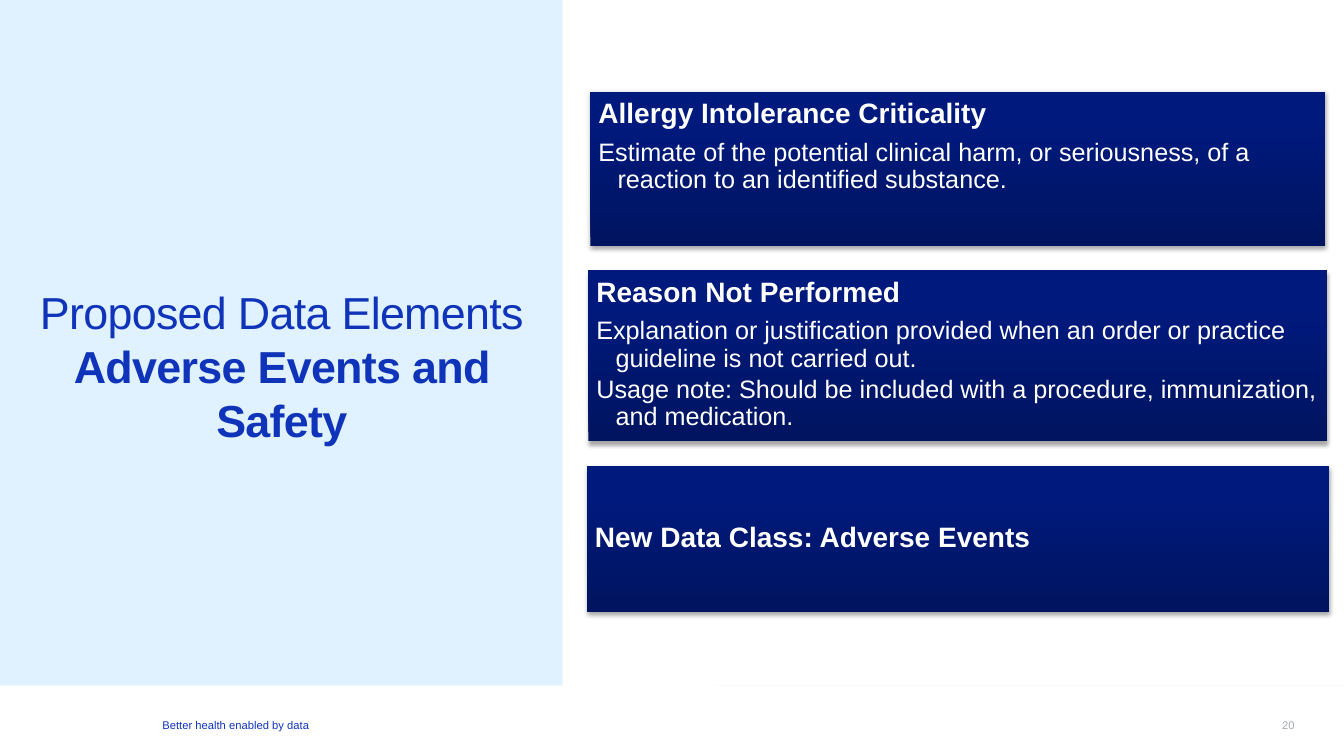
from copy import deepcopy

from pptx import Presentation
from pptx.dml.color import RGBColor
from pptx.enum.shapes import MSO_SHAPE
from pptx.enum.text import MSO_ANCHOR, MSO_AUTO_SIZE, PP_ALIGN
from pptx.oxml import parse_xml
from pptx.oxml.ns import nsdecls, qn
from pptx.util import Inches, Pt

RECT = MSO_SHAPE.RECTANGLE
TOP, MIDDLE, BOTTOM = MSO_ANCHOR.TOP, MSO_ANCHOR.MIDDLE, MSO_ANCHOR.BOTTOM
LEFT, CENTER, RIGHT = PP_ALIGN.LEFT, PP_ALIGN.CENTER, PP_ALIGN.RIGHT
NO_FIT = MSO_AUTO_SIZE.NONE

PALE = RGBColor(0xE0, 0xF2, 0xFF)
BLUE = RGBColor(0x0F, 0x34, 0xBA)
GREY = RGBColor(0xA1, 0xAA, 0xB1)
WHITE = RGBColor(0xFF, 0xFF, 0xFF)
CARD_STOPS = [
    (0, RGBColor(0x00, 0x14, 0x60)),
    (0.8, RGBColor(0x00, 0x19, 0x7D)),
    (1, RGBColor(0x00, 0x1A, 0x7E)),
]

# Content
TITLE = [("Proposed Data Elements", False), ("Adverse Events and Safety", True)]
CARDS = [  # top, width, height, anchor, heading, details
    (0.91, 7.29, 1.53, TOP, "Allergy Intolerance Criticality", [
        "Estimate of the potential clinical harm, or seriousness, of a reaction "
        "to an identified substance."]),
    (2.68, 7.33, 1.7, TOP, "Reason Not Performed", [
        "Explanation or justification provided when an order or practice "
        "guideline is not carried out.",
        "Usage note: Should be included with a procedure, immunization, "
        "and medication."]),
    (4.62, 7.36, 1.45, MIDDLE, "New Data Class: Adverse Events", []),
]
CARD_CENTER = 9.5
PANELS = [(0, 6.8, 13.33, 0.7), (6.85, 0, 6.48, 6.8), (5.58, 0, 1.52, 6.99)]
FOOTERS = [  # left, width, text, colour, alignment
    (12.54, 0.3, "20", GREY, RIGHT),
    (1.61, 4.81, "Better health enabled by data", BLUE, LEFT),
]

HEADING = {"size": Pt(20), "bold": True}
DETAIL = {"size": Pt(18), "bold": False}


def box(values):
    return [Inches(v) for v in values]


def set_all(target, values):
    for name, value in values.items():
        setattr(target, name, value)


def set_frame(tf, anchor, inset=0):
    margins = {f"margin_{side}": Inches(inset)
               for side in ("left", "top", "right", "bottom")}
    set_all(tf, {"word_wrap": True, "auto_size": NO_FIT,
                 "vertical_anchor": anchor, **margins})


def add_run(p, text, color, font):
    r = p.add_run()
    r.text = text
    r.font.color.rgb = color
    set_all(r.font, {"name": "Arial", **font})
    return r


def add_rect(position):
    sp = s.shapes.add_shape(RECT, *box(position))
    sp.line.fill.background()
    sp.shadow.inherit = False
    return sp


def style_card(sp):
    sp.fill.gradient()
    sp.fill.gradient_angle = 90
    stop_list = sp._element.spPr.find(".//" + qn("a:gsLst"))
    stop_list.append(deepcopy(stop_list[-1]))
    for stop, (position, color) in zip(sp.fill.gradient_stops, CARD_STOPS):
        stop.position = position
        stop.color.rgb = color
    sp._element.spPr.find(qn("a:effectLst")).append(parse_xml(
        f'<a:outerShdw {nsdecls("a")} blurRad="{Pt(3.1)}" dist="{Pt(1.8)}" '
        'dir="5400000" rotWithShape="0"><a:srgbClr val="000000">'
        '<a:alpha val="35000"/></a:srgbClr></a:outerShdw>'))


prs = Presentation()
prs.slide_width, prs.slide_height = box((13.33, 7.5))
s = prs.slides.add_slide(prs.slide_layouts[5])
s.background.fill.solid()
s.background.fill.fore_color.rgb = PALE

# White panels around the pale title area
for position in PANELS:
    panel = add_rect(position)
    panel.fill.solid()
    panel.fill.fore_color.rgb = WHITE

# Footer and slide number
for left, width, text, color, align in FOOTERS:
    tb = s.shapes.add_textbox(*box((left, 6.89, width, 0.37)))
    set_frame(tb.text_frame, BOTTOM)
    p = tb.text_frame.paragraphs[0]
    set_all(p, {"alignment": align, "line_spacing": 0.9})
    add_run(p, text, color, {"size": Pt(8)})

# Title
title = s.shapes.title
title.left, title.top, title.width, title.height = box((0.34, 2.78, 4.91, 1.65))
set_frame(title.text_frame, BOTTOM)
p = title.text_frame.paragraphs[0]
p.alignment = CENTER
for i, (text, bold) in enumerate(TITLE):
    if i:
        p.add_line_break()
    r = add_run(p, text, BLUE, {"size": Pt(32), "bold": bold})
    r.font._element.set("spc", "-50")

# Data element cards, centred on one axis
for top, width, height, anchor, heading, details in CARDS:
    card = add_rect((CARD_CENTER - width / 2, top, width, height))
    style_card(card)
    tf = card.text_frame
    set_frame(tf, anchor, 0.08)
    for i, text in enumerate([heading] + details):
        p = tf.add_paragraph() if i else tf.paragraphs[0]
        set_all(p, {"alignment": LEFT, "line_spacing": 0.9,
                    "space_after": Pt(2.7 if i else 7)})
        if i:
            pPr = p._p.get_or_add_pPr()
            pPr.set("marL", str(Inches(0.19)))
            pPr.set("indent", str(-Inches(0.19)))
        add_run(p, text, WHITE, DETAIL if i else HEADING)

prs.save("out.pptx")
